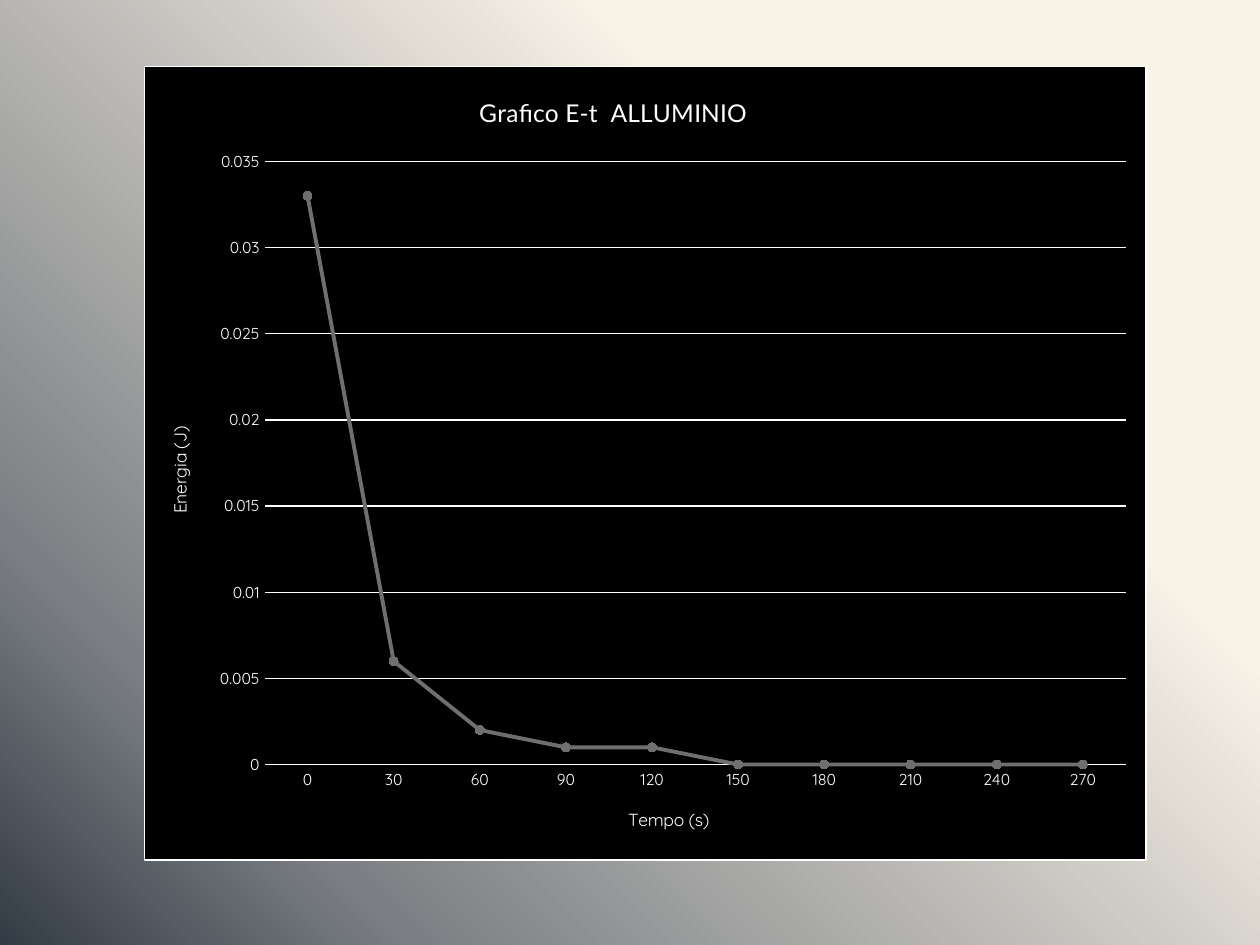
"""Build a slide with a line chart of energy against time for aluminium."""
from copy import deepcopy

from lxml.etree import SubElement
from pptx import Presentation
from pptx.chart.data import CategoryChartData
from pptx.dml.color import RGBColor
from pptx.enum.chart import XL_CHART_TYPE, XL_MARKER_STYLE, XL_TICK_MARK
from pptx.oxml import parse_xml
from pptx.oxml.ns import nsdecls, qn
from pptx.util import Inches, Pt

WHITE = RGBColor(0xFF, 0xFF, 0xFF)
GREY = RGBColor(0x6F, 0x6F, 0x6F)
BLACK = RGBColor(0x00, 0x00, 0x00)
BACKGROUND = [
    (0.30, RGBColor(0xF8, 0xF2, 0xE7)),
    (0.81, RGBColor(0x7C, 0x80, 0x84)),
    (1.00, RGBColor(0x33, 0x3B, 0x46)),
]
BACKGROUND_ANGLE = 225

CHART_BOX = (1.14, 0.52, 7.96, 6.31)
SECONDS = [str(30 * step) for step in range(10)]
ENERGY = [0.033, 0.006, 0.002, 0.001, 0.001, 0, 0, 0, 0, 0]
TITLE = ("Grafico E-t  ALLUMINIO", "Lato", 14, (0.33, 0.03))
TIME_TITLE = ("Tempo (s)", "Quicksand", 10, (0.48, 0.93))
ENERGY_TITLE = ("Energia (J)", "Quicksand", 10, (0.02, 0.45))
PLOT_AREA = (0.12, 0.12, 0.86, 0.76)


def set_font(font, name, size):
    values = {"name": name, "size": Pt(size), "bold": False}
    for key, value in values.items():
        setattr(font, key, value)
    font.color.rgb = WHITE


def set_line(line, color, width):
    line.color.rgb = color
    line.width = Pt(width)


def set_layout(parent, index, position, inner=False):
    for old in parent.findall(qn("c:layout")):
        parent.remove(old)
    layout = parse_xml(f"<c:layout {nsdecls('c')}><c:manualLayout/></c:layout>")
    manual = layout[0]
    if inner:
        SubElement(manual, qn("c:layoutTarget")).set("val", "inner")
    for mode in ("xMode", "yMode"):
        SubElement(manual, qn(f"c:{mode}")).set("val", "edge")
    for key, value in zip("xywh", position):
        SubElement(manual, qn(f"c:{key}")).set("val", str(value))
    parent.insert(index, layout)


def set_title(title, text, font_name, size, position):
    para = title.text_frame.paragraphs[0]
    span = para.add_run()
    span.text = text
    set_font(span.font, font_name, size)
    set_layout(title._element, 1, position)


def paint_background(page):
    fill = page.background.fill
    fill.gradient()
    fill.gradient_angle = BACKGROUND_ANGLE
    stops = next(page._element.iter(qn("a:gsLst")))
    stops.append(deepcopy(stops[0]))
    for stop, (position, color) in zip(fill.gradient_stops, BACKGROUND):
        stop.position = position
        stop.color.rgb = color


def paint_chart_area(chart):
    set_font(chart.font, "Quicksand", 10)
    space = chart._chartSpace
    area = parse_xml(
        f"<c:spPr {nsdecls('c', 'a')}>"
        f'<a:solidFill><a:srgbClr val="{BLACK}"/></a:solidFill>'
        f'<a:ln w="{Pt(0.75)}"><a:solidFill><a:srgbClr val="{WHITE}"/></a:solidFill></a:ln>'
        "</c:spPr>"
    )
    space.find(qn("c:txPr")).addprevious(area)
    corners = parse_xml(f'<c:roundedCorners {nsdecls("c")} val="0"/>')
    space.find(qn("c:date1904")).addnext(corners)


def style_axes(chart):
    time_axis, energy_axis = chart.category_axis, chart.value_axis
    for axis, title in ((time_axis, TIME_TITLE), (energy_axis, ENERGY_TITLE)):
        axis.major_tick_mark = axis.minor_tick_mark = XL_TICK_MARK.NONE
        set_font(axis.tick_labels.font, "Quicksand", 9)
        set_title(axis.axis_title, *title)
    set_line(time_axis.format.line, WHITE, 0.75)
    energy_axis.format.line.fill.background()
    set_line(energy_axis.major_gridlines.format.line, WHITE, 0.75)
    scale = {"minimum_scale": 0, "maximum_scale": 0.035, "major_unit": 0.005}
    for key, value in scale.items():
        setattr(energy_axis, key, value)


def style_series(series):
    series.smooth = False
    set_line(series.format.line, GREY, 2.25)
    marker = series.marker
    marker.style = XL_MARKER_STYLE.CIRCLE
    marker.size = 5
    marker.format.fill.solid()
    marker.format.fill.fore_color.rgb = GREY
    set_line(marker.format.line, GREY, 0.75)


def add_energy_chart(page):
    data = CategoryChartData(number_format="General")
    data.categories = SECONDS
    data.add_series("Series 1", ENERGY)
    box = map(Inches, CHART_BOX)
    chart = page.shapes.add_chart(XL_CHART_TYPE.LINE_MARKERS, *box, data).chart
    chart.has_legend = False
    chart.plots[0].vary_by_categories = False
    paint_chart_area(chart)
    set_title(chart.chart_title, *TITLE)
    style_axes(chart)
    style_series(chart.plots[0].series[0])
    set_layout(next(chart._chartSpace.iter(qn("c:plotArea"))), 0, PLOT_AREA, inner=True)


def main():
    deck = Presentation()
    deck.slide_width, deck.slide_height = Inches(10), Inches(7.5)
    page = deck.slides.add_slide(deck.slide_layouts[6])
    paint_background(page)
    add_energy_chart(page)
    deck.save("out.pptx")


if __name__ == "__main__":
    main()
